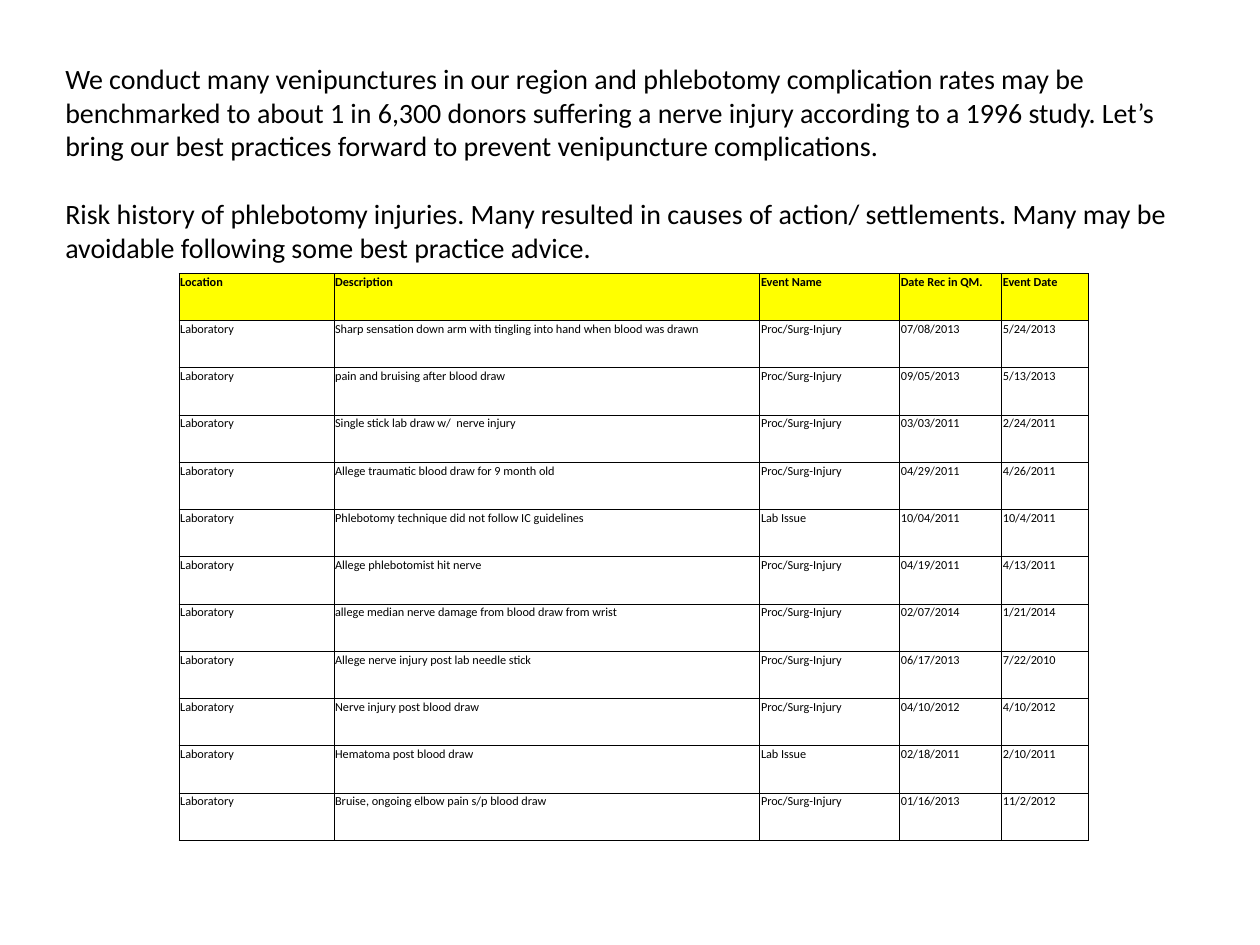
from dataclasses import dataclass

from lxml.etree import SubElement
from pptx import Presentation
from pptx.dml.color import RGBColor
from pptx.oxml.ns import qn
from pptx.util import Inches, Pt

INTRO = [
    "We conduct many venipunctures in our region and phlebotomy complication rates may be "
    "benchmarked to about 1 in 6,300 donors suffering a nerve injury according to a 1996 study. "
    "Let’s bring our best practices forward to prevent venipuncture complications.",
    "Risk history of phlebotomy injuries. Many resulted in causes of action/ settlements. "
    "Many may be avoidable following some best practice advice.",
]
HEADER = ("Location", "Description", "Event Name", "Date Rec in QM.", "Event Date")
LOCATION = "Laboratory"
INJURY, ISSUE = "Proc/Surg-Injury", "Lab Issue"
EVENTS = [
    ("Sharp sensation down arm with tingling into hand when blood was drawn",
     INJURY, "07/08/2013", "5/24/2013"),
    ("pain and bruising after blood draw", INJURY, "09/05/2013", "5/13/2013"),
    ("Single stick lab draw w/  nerve injury", INJURY, "03/03/2011", "2/24/2011"),
    ("Allege traumatic blood draw for 9 month old", INJURY, "04/29/2011", "4/26/2011"),
    ("Phlebotomy technique did not follow IC guidelines", ISSUE, "10/04/2011", "10/4/2011"),
    ("Allege phlebotomist hit nerve", INJURY, "04/19/2011", "4/13/2011"),
    ("allege median nerve damage from blood draw from wrist",
     INJURY, "02/07/2014", "1/21/2014"),
    ("Allege nerve injury post lab needle stick", INJURY, "06/17/2013", "7/22/2010"),
    ("Nerve injury post blood draw", INJURY, "04/10/2012", "4/10/2012"),
    ("Hematoma post blood draw", ISSUE, "02/18/2011", "2/10/2011"),
    ("Bruise, ongoing elbow pain s/p blood draw", INJURY, "01/16/2013", "11/2/2012"),
]

SLIDE_W, SLIDE_H = 10, 7.5
TABLE_LEFT, TABLE_TOP, TABLE_H = 1.42, 2.17, 4.5
COL_WIDTHS = (1.23, 3.38, 1.11, 0.81, 0.69)
CELL_INSET = 0.01
INTRO_BOX = (0.42, 0.17, 9, 2.26)
INTRO_TOP_INSET = 0.32
INTRO_GAP = 19.5


@dataclass(frozen=True)
class Theme:
    font: str = "Calibri"
    ink: str = "000000"
    header_fill: str = "FFFF00"
    intro_size: float = 16
    cell_size: float = 7
    border: float = 0.5


THEME = Theme()


def style(p, size, bold=False):
    for r in p.runs:
        r.font.name = THEME.font
        r.font.size = Pt(size)
        r.font.bold = bold
        r.font.color.rgb = RGBColor.from_string(THEME.ink)


def add_borders(cell):
    """Draw all four sides; must run before the fill is set."""
    tc_pr = cell._tc.get_or_add_tcPr()
    for side in ("lnL", "lnR", "lnT", "lnB"):
        ln = SubElement(tc_pr, qn(f"a:{side}"), w=str(Pt(THEME.border)))
        fill = SubElement(ln, qn("a:solidFill"))
        SubElement(fill, qn("a:srgbClr"), val=THEME.ink)


def fill_cell(cell, text, is_header):
    cell.margin_left = cell.margin_right = cell.margin_top = Inches(CELL_INSET)
    cell.margin_bottom = 0
    add_borders(cell)
    if is_header:
        cell.fill.solid()
        cell.fill.fore_color.rgb = RGBColor.from_string(THEME.header_fill)
    else:
        cell.fill.background()
    cell.text_frame.text = text
    style(cell.text_frame.paragraphs[0], THEME.cell_size, is_header)


def add_event_table(s):
    rows = [HEADER] + [(LOCATION, *event) for event in EVENTS]
    table = s.shapes.add_table(
        len(rows), len(HEADER), Inches(TABLE_LEFT), Inches(TABLE_TOP),
        Inches(sum(COL_WIDTHS)), Inches(TABLE_H)).table
    table.horz_banding = False
    for column, width in zip(table.columns, COL_WIDTHS):
        column.width = Inches(width)
    for i, values in enumerate(rows):
        table.rows[i].height = Inches(TABLE_H / len(rows))
        for j, text in enumerate(values):
            fill_cell(table.cell(i, j), text, i == 0)


def add_intro(s):
    tf = s.shapes.add_textbox(*map(Inches, INTRO_BOX)).text_frame
    tf.word_wrap = True
    tf.margin_top = Inches(INTRO_TOP_INSET)
    for i, text in enumerate(INTRO):
        p = tf.add_paragraph() if i else tf.paragraphs[0]
        p.text = text
        if i:
            p.space_before = Pt(INTRO_GAP)
        style(p, THEME.intro_size)


def main():
    prs = Presentation()
    prs.slide_width, prs.slide_height = Inches(SLIDE_W), Inches(SLIDE_H)
    s = prs.slides.add_slide(prs.slide_layouts[6])
    add_event_table(s)
    add_intro(s)
    prs.save("out.pptx")


if __name__ == "__main__":
    main()
